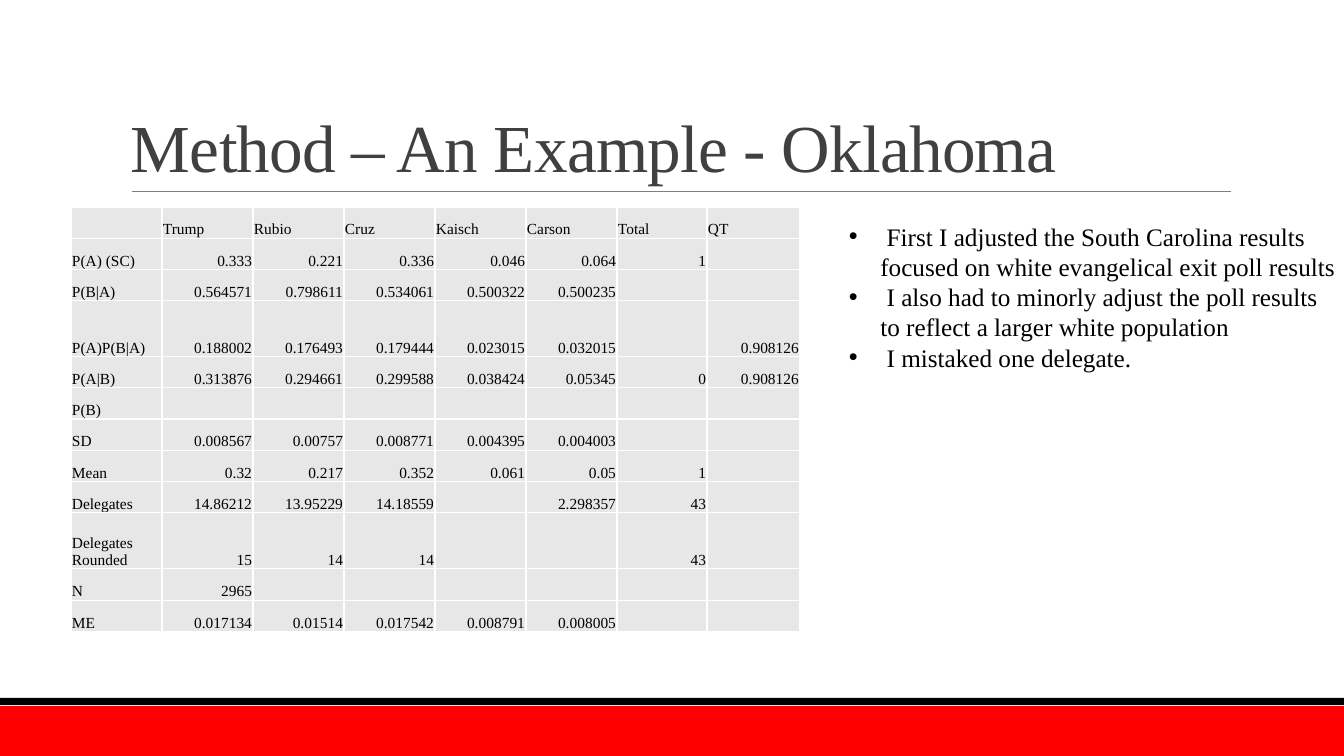
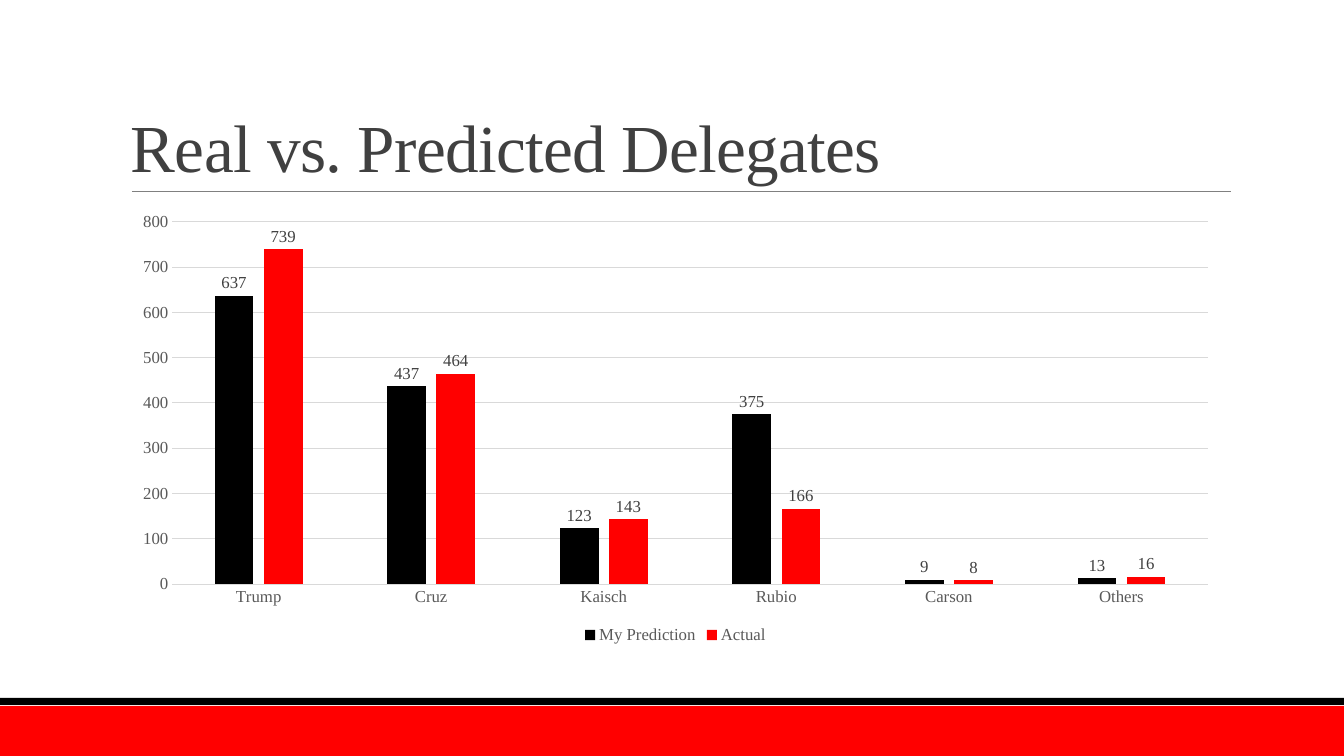
from lxml import etree
from pptx import Presentation
from pptx import util as u
from pptx.chart import data
from pptx.dml.color import RGBColor
from pptx.enum import chart as charts, shapes, text
from pptx.oxml import ns

SLIDE_WIDTH, SLIDE_HEIGHT = 1344, 756
EMU_PER_PX = 12192000 / SLIDE_WIDTH

BLACK = RGBColor(0x00, 0x00, 0x00)
RED = RGBColor(0xFF, 0x00, 0x00)
WHITE = RGBColor(0xFF, 0xFF, 0xFF)
TITLE_GRAY = RGBColor(0x40, 0x40, 0x40)
AXIS_GRAY = RGBColor(0x59, 0x59, 0x59)
RULE_GRAY = RGBColor(0x80, 0x80, 0x80)
GRID_GRAY = RGBColor(0xD9, 0xD9, 0xD9)
CELL_GRAY = RGBColor(0xE7, 0xE7, 0xE7)

FONT = "Times New Roman"
CELL_SIZE, BODY_SIZE, TITLE_SIZE, CHART_SIZE = 11, 18, 48, 12

BANDS = [(706, 50, RED), (698, 7, BLACK)]
TITLE_BOX = (121, 31, 1109, 160)
TITLE_RULE = (132, 191, 1231, 191)
CHART_BOX = (121, 204, 1109, 444)
NOTES_BOX = (839, 216, 512, 163)
TABLE_LEFT, TABLE_TOP = 71, 207
COLUMN_WIDTHS = [91] * 6 + [90, 93]
ROW_HEIGHT, TALL_ROW_HEIGHT = 31, 56
TALL_ROWS = ("P(A)P(B|A)", "Delegates Rounded")

OKLAHOMA = [
    ["", "Trump", "Rubio", "Cruz", "Kaisch", "Carson", "Total", "QT"],
    ["P(A) (SC)", "0.333", "0.221", "0.336", "0.046", "0.064", "1", ""],
    ["P(B|A)", "0.564571", "0.798611", "0.534061", "0.500322", "0.500235", "", ""],
    ["P(A)P(B|A)", "0.188002", "0.176493", "0.179444", "0.023015", "0.032015", "", "0.908126"],
    ["P(A|B)", "0.313876", "0.294661", "0.299588", "0.038424", "0.05345", "0", "0.908126"],
    ["P(B)", "", "", "", "", "", "", ""],
    ["SD", "0.008567", "0.00757", "0.008771", "0.004395", "0.004003", "", ""],
    ["Mean", "0.32", "0.217", "0.352", "0.061", "0.05", "1", ""],
    ["Delegates", "14.86212", "13.95229", "14.18559", "", "2.298357", "43", ""],
    ["Delegates Rounded", "15", "14", "14", "", "", "43", ""],
    ["N", "2965", "", "", "", "", "", ""],
    ["ME", "0.017134", "0.01514", "0.017542", "0.008791", "0.008005", "", ""],
]
ADJUSTMENTS = [
    " First I adjusted the South Carolina results focused on white evangelical exit poll results",
    " I also had to minorly adjust the poll results to reflect a larger white population",
    " I mistaked one delegate.",
]
CANDIDATES = ["Trump", "Cruz", "Kaisch", "Rubio", "Carson", "Others"]
DELEGATES = [
    ("My Prediction", [637, 437, 123, 375, 9, 13], BLACK),
    ("Actual", [739, 464, 143, 166, 8, 16], RED),
]


def px(length):
    return u.Emu(round(length * EMU_PER_PX))


def box(lengths):
    return [px(length) for length in lengths]


def set_values(target, values):
    for name, value in values.items():
        setattr(target, name, value)


def set_font(font, size, color):
    set_values(font, {"name": FONT, "size": u.Pt(size)})
    font.color.rgb = color


def set_line(line, color, width):
    line.color.rgb = color
    line.width = u.Pt(width)


def add_band(slide, top, height, color):
    shape = slide.shapes.add_shape(
        shapes.MSO_SHAPE.RECTANGLE, *box((0, top, SLIDE_WIDTH, height)))
    shape.shadow.inherit = False
    shape.fill.solid()
    shape.fill.fore_color.rgb = color
    shape.line.fill.background()


def add_title_rule(slide):
    connector = slide.shapes.add_connector(
        shapes.MSO_CONNECTOR.STRAIGHT, *box(TITLE_RULE))
    set_line(connector.line, RULE_GRAY, 0.5)
    etree.SubElement(connector._element.spPr, ns.qn("a:effectLst"))


def add_title(slide, title):
    frame = slide.shapes.add_textbox(*box(TITLE_BOX)).text_frame
    set_values(frame, {"word_wrap": True, "vertical_anchor": text.MSO_ANCHOR.BOTTOM})
    paragraph = frame.paragraphs[0]
    paragraph.line_spacing = 0.85
    run = paragraph.add_run()
    run.text = title
    set_font(run.font, TITLE_SIZE, TITLE_GRAY)
    run._r.get_or_add_rPr().set("spc", "-50")


def add_slide(presentation, title):
    slide = presentation.slides.add_slide(presentation.slide_layouts[6])
    for band in BANDS:
        add_band(slide, *band)
    add_title_rule(slide)
    add_title(slide, title)
    return slide


def add_cell_borders(cell):
    properties = cell._tc.get_or_add_tcPr()
    for side in ("lnL", "lnR", "lnT", "lnB"):
        line = etree.SubElement(properties, ns.qn(f"a:{side}"), w=str(u.Pt(1)))
        fill = etree.SubElement(line, ns.qn("a:solidFill"))
        etree.SubElement(fill, ns.qn("a:srgbClr"), val=str(WHITE))


def fill_cell(cell, value, alignment):
    set_values(cell, {
        "margin_left": px(1), "margin_right": px(1), "margin_top": px(1),
        "margin_bottom": 0, "vertical_anchor": text.MSO_ANCHOR.BOTTOM})
    add_cell_borders(cell)
    cell.fill.solid()
    cell.fill.fore_color.rgb = CELL_GRAY
    if value:
        paragraph = cell.text_frame.paragraphs[0]
        paragraph.alignment = alignment
        run = paragraph.add_run()
        run.text = value
        set_font(run.font, CELL_SIZE, BLACK)


def add_results_table(slide, rows):
    heights = [TALL_ROW_HEIGHT if row[0] in TALL_ROWS else ROW_HEIGHT for row in rows]
    table = slide.shapes.add_table(
        len(rows), len(COLUMN_WIDTHS),
        *box((TABLE_LEFT, TABLE_TOP, sum(COLUMN_WIDTHS), sum(heights)))).table
    set_values(table, {"first_row": False, "horz_banding": False})
    for column, width in zip(table.columns, COLUMN_WIDTHS):
        column.width = px(width)
    for row_index, (row, height) in enumerate(zip(rows, heights)):
        table.rows[row_index].height = px(height)
        for column_index, value in enumerate(row):
            is_label = row_index == 0 or column_index == 0
            alignment = text.PP_ALIGN.LEFT if is_label else text.PP_ALIGN.RIGHT
            fill_cell(table.cell(row_index, column_index), value, alignment)


def add_bullets(slide, items):
    frame = slide.shapes.add_textbox(*box(NOTES_BOX)).text_frame
    set_values(frame, {"word_wrap": True, "auto_size": text.MSO_AUTO_SIZE.SHAPE_TO_FIT_TEXT})
    for index, item in enumerate(items):
        paragraph = frame.add_paragraph() if index else frame.paragraphs[0]
        run = paragraph.add_run()
        run.text = item
        set_font(run.font, BODY_SIZE, BLACK)
        properties = paragraph._p.get_or_add_pPr()
        indent = u.Pt(22.5)
        properties.set("marL", str(indent))
        properties.set("indent", str(-indent))
        etree.SubElement(properties, ns.qn("a:buFont"), typeface="Arial")
        etree.SubElement(properties, ns.qn("a:buChar"), char="•")


def style_axes(chart):
    for axis in (chart.category_axis, chart.value_axis):
        axis.major_tick_mark = charts.XL_TICK_MARK.NONE
        set_font(axis.tick_labels.font, CHART_SIZE, AXIS_GRAY)
    set_line(chart.category_axis.format.line, GRID_GRAY, 0.75)
    set_values(chart.value_axis, {
        "minimum_scale": 0, "maximum_scale": 800, "major_unit": 100,
        "has_major_gridlines": True})
    chart.value_axis.format.line.fill.background()
    set_line(chart.value_axis.major_gridlines.format.line, GRID_GRAY, 0.75)


def style_series(series, color):
    series.invert_if_negative = False
    series.format.fill.solid()
    series.format.fill.fore_color.rgb = color
    labels = series.data_labels
    set_values(labels, {
        "show_value": True, "position": charts.XL_LABEL_POSITION.OUTSIDE_END})
    set_font(labels.font, CHART_SIZE, TITLE_GRAY)


def add_delegate_chart(slide):
    chart_data = data.CategoryChartData()
    chart_data.categories = CANDIDATES
    for name, values, _ in DELEGATES:
        chart_data.add_series(name, values)
    chart = slide.shapes.add_chart(
        charts.XL_CHART_TYPE.COLUMN_CLUSTERED, *box(CHART_BOX), chart_data).chart
    set_values(chart, {"has_title": False, "has_legend": True})
    set_font(chart.font, 10, BLACK)
    set_values(chart.legend, {
        "position": charts.XL_LEGEND_POSITION.BOTTOM, "include_in_layout": False})
    set_font(chart.legend.font, CHART_SIZE, AXIS_GRAY)
    plot = chart.plots[0]
    set_values(plot, {"gap_width": 219, "overlap": -27, "vary_by_categories": False})
    style_axes(chart)
    for series, (_, _, color) in zip(plot.series, DELEGATES):
        style_series(series, color)


def main():
    presentation = Presentation()
    set_values(presentation, {
        "slide_width": px(SLIDE_WIDTH), "slide_height": px(SLIDE_HEIGHT)})
    example = add_slide(presentation, "Method – An Example - Oklahoma")
    add_results_table(example, OKLAHOMA)
    add_bullets(example, ADJUSTMENTS)
    comparison = add_slide(presentation, "Real vs. Predicted Delegates")
    add_delegate_chart(comparison)
    presentation.save("out.pptx")


if __name__ == "__main__":
    main()
